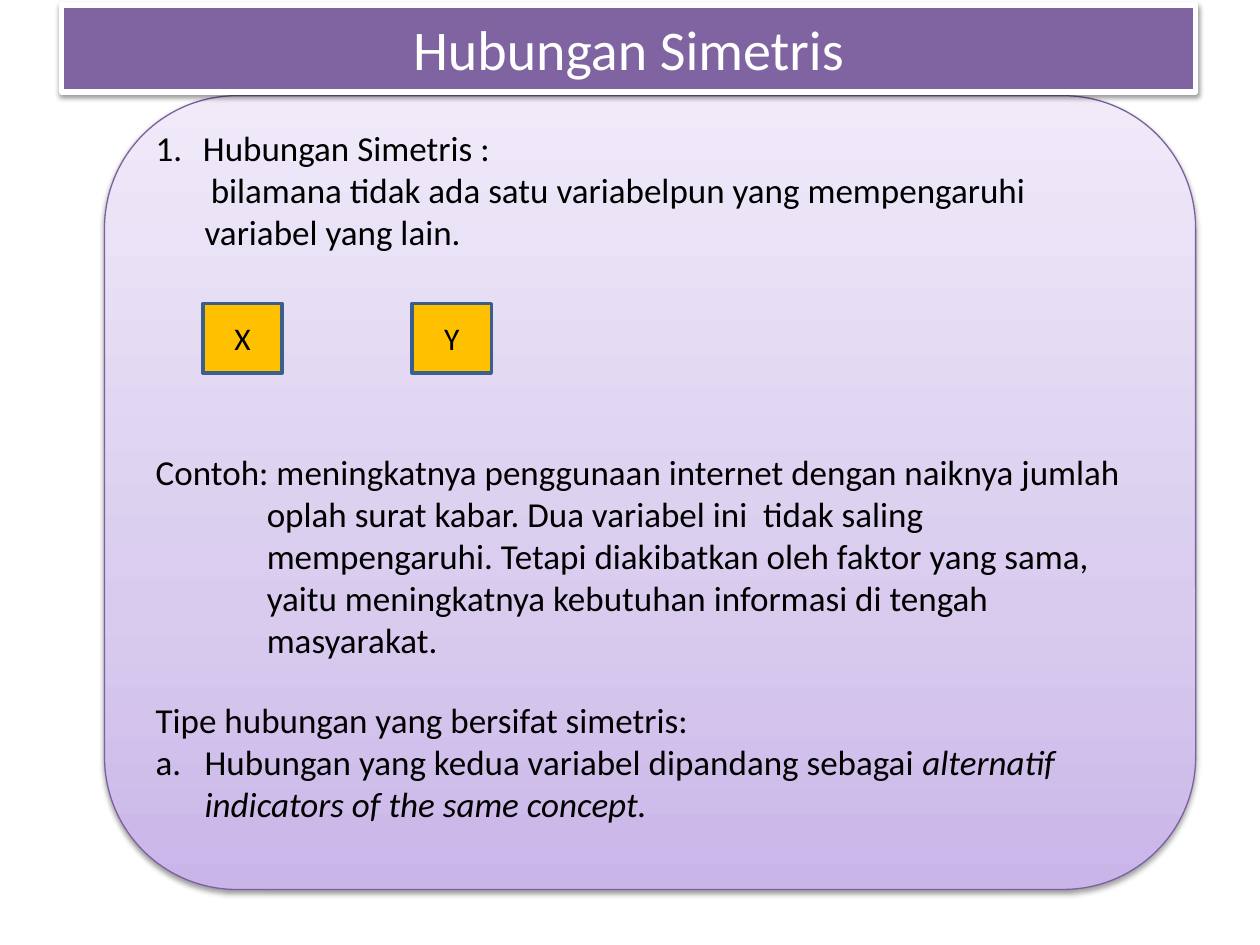
"""Build the slide on symmetric relationships between variables."""
from copy import deepcopy

from lxml import etree
from pptx import Presentation
from pptx import util as u
from pptx.dml.color import RGBColor
from pptx.enum import shapes, text
from pptx.oxml.ns import qn

Pt = u.Pt
hue = RGBColor.from_string


def add_box(kind, spot, fill, line, width, shade=False):
    box = slide.shapes.add_shape(kind, *[Pt(n) for n in spot])
    box.shadow.inherit = False
    if fill:
        box.fill.solid()
        box.fill.fore_color.rgb = hue(fill)
    box.line.color.rgb = hue(line)
    box.line.width = Pt(width)
    box.text_frame.word_wrap = True
    box.text_frame.vertical_anchor = text.MSO_ANCHOR.MIDDLE
    if shade:
        root = box._element.spPr.find(qn("a:effectLst"))
        drop = etree.SubElement(root, qn("a:outerShdw"), blurRad=str(Pt(3.1)),
                                dist=str(Pt(1.6)), dir="5400000", rotWithShape="0")
        tone = etree.SubElement(drop, qn("a:srgbClr"), val="000000")
        etree.SubElement(tone, qn("a:alpha"), val="38000")
    return box


def style(part, size, color):
    part.font.name = "Calibri"
    part.font.size = Pt(size)
    part.font.color.rgb = hue(color)


deck = Presentation()
deck.slide_width, deck.slide_height = Pt(720), Pt(540)
slide = deck.slides.add_slide(deck.slide_layouts[6])
rect = shapes.MSO_SHAPE.RECTANGLE
panel = add_box(shapes.MSO_SHAPE.ROUNDED_RECTANGLE, (59.76, 54.72, 623.52, 453.6),
                None, "7D60A0", 0.75, True)
panel.fill.gradient()
panel.fill.gradient_angle = 90
stops = panel._element.spPr.find(qn("a:gradFill")).find(qn("a:gsLst"))
stops.append(deepcopy(stops[-1]))
tones = [(0, "C9B5E8"), (0.35, "D8CBEE"), (1, "F0EAF9")]
for stop, (place, color) in zip(panel.fill.gradient_stops, tones):
    stop.position = place
    stop.color.rgb = hue(color)

rows = [
    (27, -27, 0, "arabicPeriod", ["Hubungan Simetris :"]),
    (28, 3.5, 0, None, ["bilamana tidak ada satu variabelpun yang mempengaruhi "
                        "variabel yang lain."]),
    (63.5, -63.5, 113, None, [
        "Contoh: meningkatnya penggunaan internet dengan naiknya jumlah oplah surat "
        "kabar. Dua variabel ini  tidak saling mempengaruhi. Tetapi diakibatkan oleh "
        "faktor yang sama, yaitu meningkatnya kebutuhan informasi di tengah masyarakat."]),
    (28, -28, 22, None, ["Tipe hubungan yang bersifat simetris:"]),
    (28, -28, 0, "alphaLcPeriod", ["Hubungan yang kedua variabel dipandang sebagai ",
                                   "alternatif indicators of the same concept."]),
]
frame = panel.text_frame
frame.margin_bottom = Pt(23)
for i, (left, first, gap, mark, parts) in enumerate(rows):
    para = frame.add_paragraph() if i else frame.paragraphs[0]
    para.alignment = text.PP_ALIGN.LEFT
    if gap:
        para.space_before = Pt(gap)
    props = para._p.get_or_add_pPr()
    props.set("marL", str(Pt(left)))
    props.set("indent", str(Pt(first)))
    if mark:
        etree.SubElement(props, qn("a:buFont"), typeface="+mj-lt")
        etree.SubElement(props, qn("a:buAutoNum"), type=mark)
    for j, words in enumerate(parts):
        run = para.add_run()
        run.text = words
        run.font.italic = j == 1
        style(run, 20, "000000")

title = add_box(rect, (35.28, 2.88, 648, 49.68), "8064A2", "FFFFFF", 3, True)
labels = [(title, "Hubungan Simetris", 32, "FFFFFF")]
for left, name in [(115.92, "X"), (235.44, "Y")]:
    box = add_box(rect, (left, 173.52, 45.36, 39.6), "FFC000", "3A5F8C", 2)
    labels.append((box, name, 18, "000000"))
for box, words, size, color in labels:
    para = box.text_frame.paragraphs[0]
    para.text = words
    para.alignment = text.PP_ALIGN.CENTER
    style(para.runs[0], size, color)

deck.save("out.pptx")
